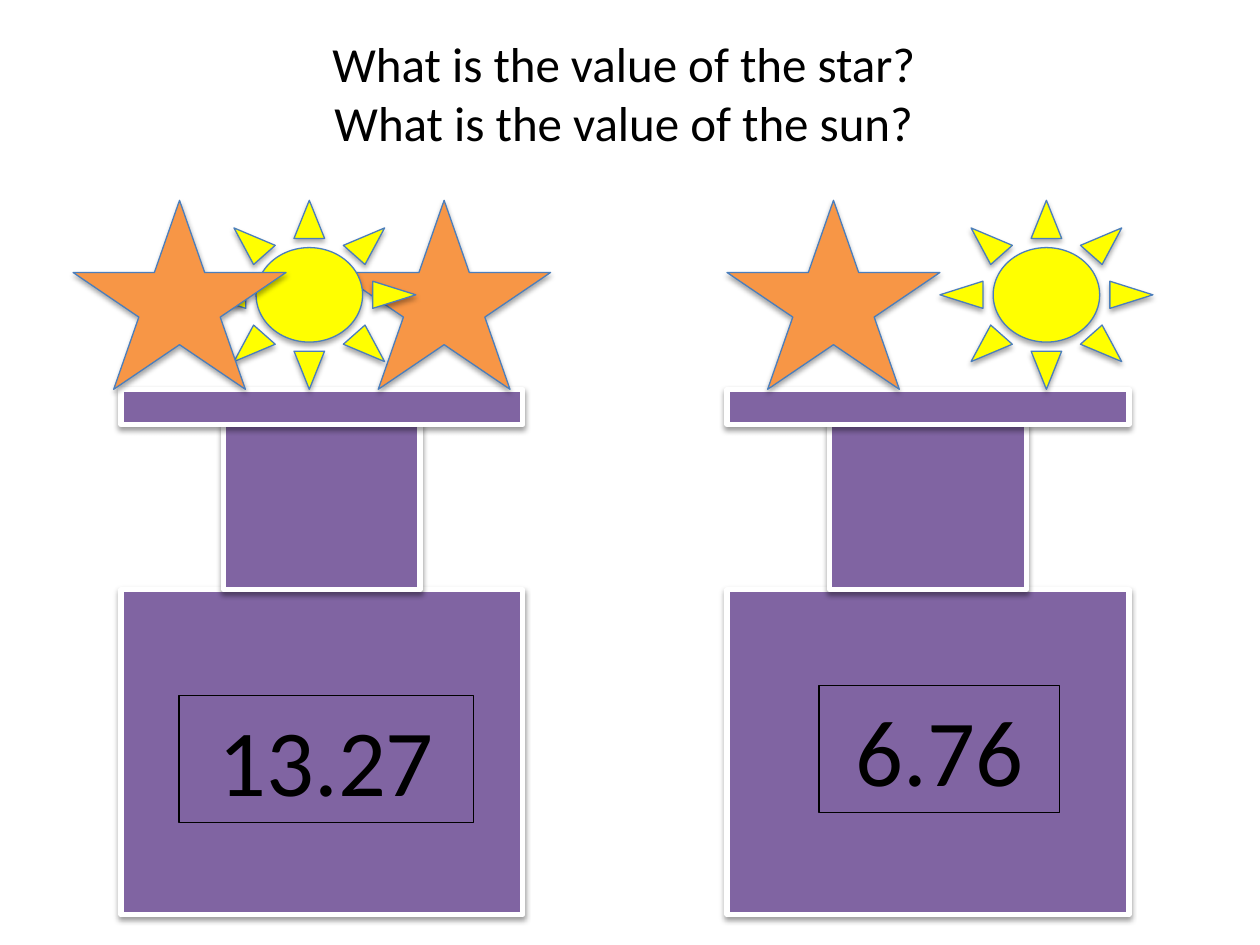
from dataclasses import dataclass

from lxml.etree import SubElement
from pptx import Presentation
from pptx.dml.color import RGBColor
from pptx.enum.shapes import MSO_SHAPE as Kind
from pptx.enum.text import MSO_AUTO_SIZE as Fit, PP_ALIGN as Align
from pptx.oxml.ns import qn
from pptx.util import Inches, Pt


@dataclass(frozen=True)
class Theme:
    font: str = "Calibri"
    ink: str = "000000"
    scale: str = "8064A2"
    rim: str = "FFFFFF"
    star: str = "F79646"
    sun: str = "FFFF00"
    edge: str = "4B7EBC"
    title: int = 28
    value: int = 54


THEME = Theme()
ICON_TOP, ICON_W, ICON_H = 1.59, 1.69, 1.5
SCALE_W, NECK_W = 3.19, 1.56


def rgb(code):
    return RGBColor.from_string(code)


def add_shadow(shape, alpha, dist):
    """Give the shape a soft shadow that falls straight down."""
    shape.shadow.inherit = False
    effects = shape._element.spPr.find(qn("a:effectLst"))
    outer = SubElement(effects, qn("a:outerShdw"), blurRad=str(Pt(3.1)),
                       dist=str(Pt(dist)), dir="5400000", rotWithShape="0")
    color = SubElement(outer, qn("a:srgbClr"), val=THEME.ink)
    SubElement(color, qn("a:alpha"), val=str(alpha * 1000))


def add_solid(shapes, kind, box, fill, line, width, alpha, dist):
    shape = shapes.add_shape(kind, *map(Inches, box))
    shape.fill.solid()
    shape.fill.fore_color.rgb = rgb(fill)
    shape.line.color.rgb = rgb(line)
    shape.line.width = Pt(width)
    add_shadow(shape, alpha, dist)


def add_text(shapes, box, lines, size, wrap=True):
    label = shapes.add_textbox(*map(Inches, box))
    frame = label.text_frame
    frame.word_wrap = wrap
    frame.auto_size = Fit.SHAPE_TO_FIT_TEXT
    for i, line in enumerate(lines):
        para = frame.add_paragraph() if i else frame.paragraphs[0]
        para.alignment = Align.CENTER
        run = para.add_run()
        run.text = line
        run.font.name = THEME.font
        run.font.size = Pt(size)
        run.font.color.rgb = rgb(THEME.ink)
    return label


def add_scale(slide, left, value, box):
    """Group a base, neck and tray with the value in a framed box."""
    shapes = slide.shapes.add_group_shape().shapes
    neck = left + (SCALE_W - NECK_W) / 2
    for part in ((left, 4.68, SCALE_W, 2.58),
                 (neck, 3.37, NECK_W, 1.31),
                 (left, 3.09, SCALE_W, 0.28)):
        add_solid(shapes, Kind.RECTANGLE, part, THEME.scale, THEME.rim,
                  3, 38, 1.6)
    label = add_text(shapes, box, [value], THEME.value)
    label.line.color.rgb = rgb(THEME.ink)
    label.line.width = Pt(0.75)


def add_icon(slide, kind, left, fill):
    add_solid(slide.shapes, kind, (left, ICON_TOP, ICON_W, ICON_H), fill,
              THEME.edge, 0.75, 35, 1.8)


def main():
    deck = Presentation()
    deck.slide_width, deck.slide_height = Inches(10), Inches(7.5)
    slide = deck.slides.add_slide(deck.slide_layouts[6])

    add_scale(slide, 5.77, "6.76", (6.5, 5.44, 1.91, 1.01))
    add_scale(slide, 0.96, "13.27", (1.42, 5.52, 2.34, 1.01))

    star = Kind.STAR_5_POINT, THEME.star
    sun = Kind.SUN, THEME.sun
    for left, (kind, fill) in ((5.77, star), (7.46, sun), (2.68, star),
                               (1.61, sun), (0.58, star)):
        add_icon(slide, kind, left, fill)

    add_text(slide.shapes, (2.5, 0.22, 4.9, 1.04),
             ["What is the value of the star?",
              "What is the value of the sun?"], THEME.title, wrap=False)
    deck.save("out.pptx")


if __name__ == "__main__":
    main()
